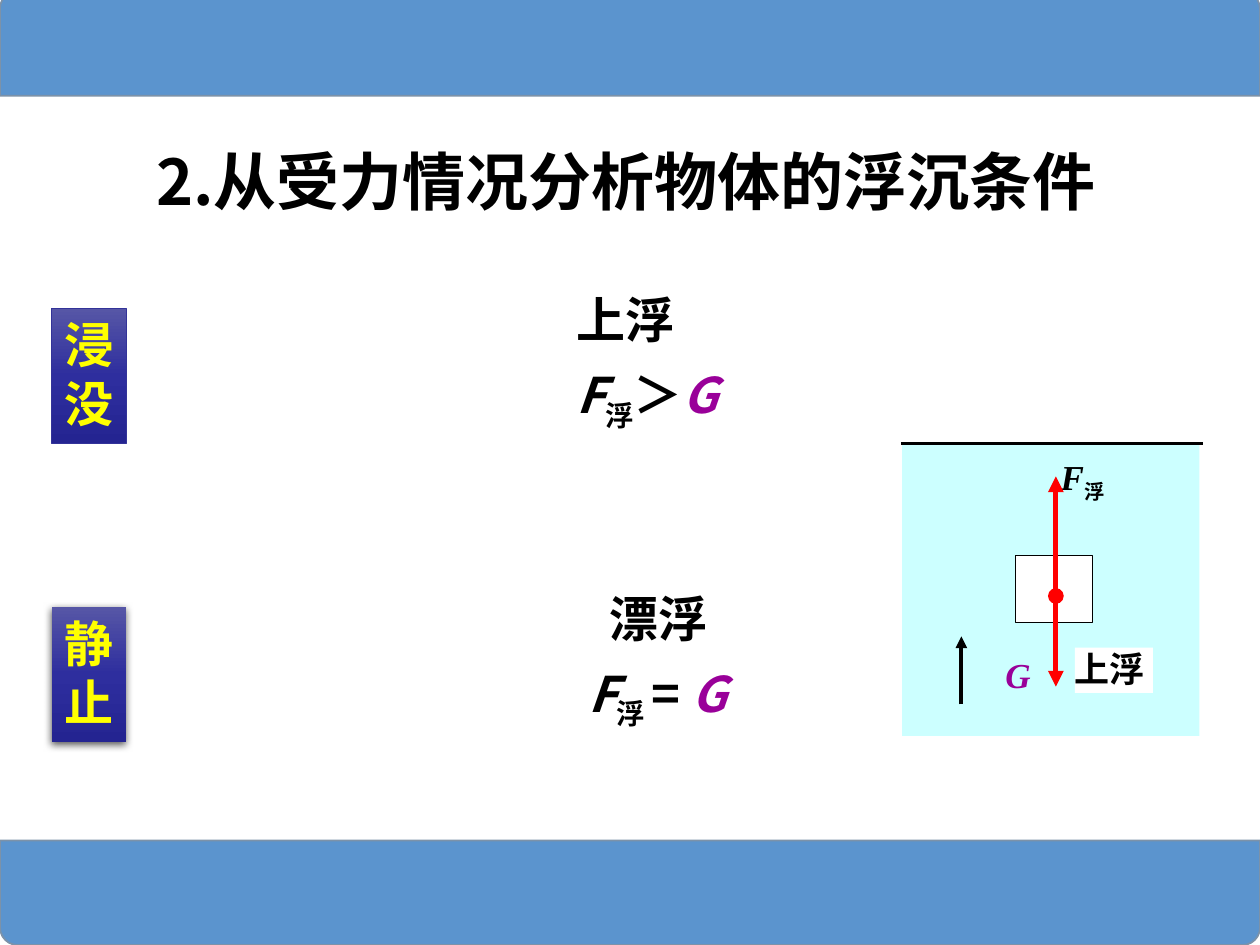
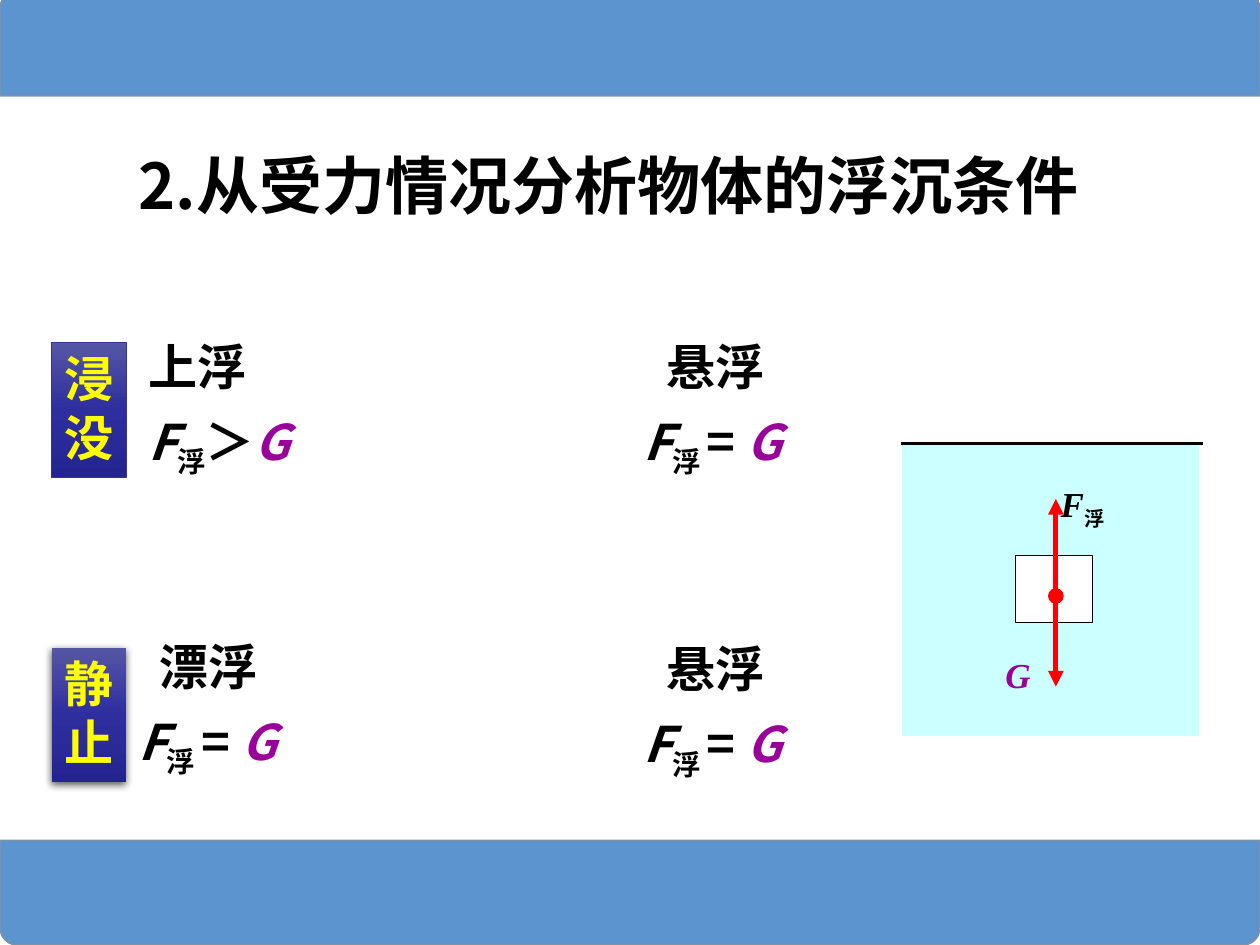
from dataclasses import dataclass

from lxml import etree
from pptx import Presentation
from pptx.dml.color import RGBColor
from pptx.enum.shapes import MSO_CONNECTOR, MSO_SHAPE
from pptx.enum.text import MSO_ANCHOR, MSO_AUTO_SIZE, PP_ALIGN
from pptx.oxml import parse_xml
from pptx.oxml.ns import nsdecls, qn
from pptx.util import Inches, Pt

RECT = MSO_SHAPE.RECTANGLE
BAND = MSO_SHAPE.ROUND_2_SAME_RECTANGLE
STRAIGHT = MSO_CONNECTOR.STRAIGHT
TOP = MSO_ANCHOR.TOP
LEFT = PP_ALIGN.LEFT
NO_FIT = MSO_AUTO_SIZE.NONE
TITLE_ONLY = 5


@dataclass(frozen=True)
class Theme:
    sans: str = "Noto Sans CJK SC"
    serif: str = "Times New Roman"
    ink: str = "000000"
    white: str = "FFFFFF"
    water: str = "CCFFFF"
    force: str = "FF0000"
    gravity: str = "990099"
    band: str = "5B94CE"
    band_line: str = "7C92A9"
    tag_text: str = "FFFF00"
    tag_line: str = "333399"
    tag_stops: tuple = ((0, "5656A6"), (50, "2E2E9E"), (100, "242491"))
    title_size: int = 36
    body_size: int = 28
    label_size: int = 20
    line_height: float = 1.2


T = Theme()
TITLE = "2.从受力情况分析物体的浮沉条件"
GREATER = (("浮", "sub"), ("＞", ""))
EQUAL = (("浮 ", "sub"), ("= ", ""))


def rgb(value):
    return RGBColor.from_string(value)


def box(left, top, width, height):
    return tuple(Inches(v) for v in (left, top, width, height))


def add_run(p, text, size, color=T.ink, font=T.sans, style=""):
    r = p.add_run()
    r.text = text
    f = r.font
    f.size, f.name, f.bold = Pt(size), font, True
    f.italic = style == "italic"
    f.color.rgb = rgb(color)
    props = f._element
    etree.SubElement(props, qn("a:ea")).set("typeface", T.sans)
    if style == "sub":
        props.set("baseline", "-25000")


def set_paragraph(p, size, indent=0, before=0):
    p.alignment = LEFT
    p.line_spacing = Pt(size * T.line_height)
    p.space_before = Pt(before)
    if indent:
        p._p.get_or_add_pPr().set("marL", str(Inches(indent)))


def set_frame(tf, wrap=True):
    tf.word_wrap = wrap
    tf.auto_size = NO_FIT
    tf.vertical_anchor = TOP


def add_title(s, left, top):
    sp = s.shapes.title
    sp.left, sp.top, sp.width, sp.height = box(left, top, 7.73, 0.71)
    set_frame(sp.text_frame)
    p = sp.text_frame.paragraphs[0]
    set_paragraph(p, T.title_size)
    add_run(p, TITLE, T.title_size)


def add_shape(s, kind, place, fill, line=None, line_width=0.75):
    sp = s.shapes.add_shape(kind, *box(*place))
    sp.shadow.inherit = False
    sp.fill.solid()
    sp.fill.fore_color.rgb = rgb(fill)
    if line:
        sp.line.color.rgb = rgb(line)
        sp.line.width = Pt(line_width)
    else:
        sp.line.fill.background()
    return sp


def add_bands(s):
    for top, turn in ((-0.07, 0), (6.67, 180)):
        sp = add_shape(s, BAND, (0, top, 10, 0.83), T.band, T.band_line, 1)
        sp.rotation = turn


def add_line(s, start, end, color, width, head=None, tail=None):
    c = s.shapes.add_connector(STRAIGHT, *(Inches(v) for v in start + end))
    c.line.color.rgb = rgb(color)
    c.line.width = Pt(width)
    for name, kind in (("a:headEnd", head), ("a:tailEnd", tail)):
        if kind:
            etree.SubElement(c.line._ln, qn(name)).set("type", kind)
    etree.SubElement(c._element.spPr, qn("a:effectLst"))


def add_text_box(s, place):
    tf = s.shapes.add_textbox(*box(*place)).text_frame
    set_frame(tf)
    return tf


def add_state(s, left, top, name, relation, name_indent, formula_indent=0):
    tf = add_text_box(s, (left, top, 3.2, 1.3))
    p = tf.paragraphs[0]
    set_paragraph(p, T.body_size, name_indent)
    add_run(p, name, T.body_size)
    p = tf.add_paragraph()
    set_paragraph(p, T.body_size, formula_indent, T.body_size / 2)
    add_run(p, "F", T.body_size, style="italic")
    for text, style in relation:
        add_run(p, text, T.body_size, style=style)
    add_run(p, "G", T.body_size, T.gravity, style="italic")


def add_tag(s, top, letters, raised=False):
    sp = add_shape(s, RECT, (0.41, top, 0.59, 1.07), T.tag_stops[0][1],
                   None if raised else T.tag_line, 0.5)
    stops = "".join(f'<a:gs pos="{pos * 1000}"><a:srgbClr val="{color}"/></a:gs>'
                    for pos, color in T.tag_stops)
    props = sp._element.spPr
    solid = props.find(qn("a:solidFill"))
    props.replace(solid, parse_xml(
        f'<a:gradFill {nsdecls("a")}><a:gsLst>{stops}</a:gsLst>'
        '<a:lin ang="5400000" scaled="0"/></a:gradFill>'))
    if raised:
        props.find(qn("a:effectLst")).append(parse_xml(
            f'<a:outerShdw {nsdecls("a")} blurRad="{Pt(4.5)}" dist="{Pt(1.5)}" '
            'dir="5400000" rotWithShape="0"><a:srgbClr val="000000">'
            '<a:alpha val="63000"/></a:srgbClr></a:outerShdw>'))
    tf = sp.text_frame
    set_frame(tf, wrap=False)
    for i, letter in enumerate(letters):
        p = tf.add_paragraph() if i else tf.paragraphs[0]
        set_paragraph(p, T.body_size)
        add_run(p, letter, T.body_size, T.tag_text)


def add_water(s):
    add_shape(s, RECT, (7.16, 3.52, 2.36, 2.32), T.water)
    add_line(s, (7.15, 3.52), (9.55, 3.52), T.ink, 1.5)


def add_rising_mark(s):
    sp = add_shape(s, RECT, (8.53, 5.14, 0.62, 0.36), T.white)
    tf = sp.text_frame
    set_frame(tf)
    tf.margin_left = tf.margin_top = tf.margin_right = tf.margin_bottom = 0
    p = tf.paragraphs[0]
    set_paragraph(p, T.label_size)
    add_run(p, "上浮", T.label_size)
    add_line(s, (7.63, 5.59), (7.63, 5.05), T.ink, 2.25, tail="triangle")


def add_block_forces(s, buoyancy_tip, label_top):
    center = (8.38, 4.73)
    add_shape(s, RECT, (8.06, 4.41, 0.61, 0.53), T.white, T.ink)
    p = add_text_box(s, (8.32, label_top, 0.71, 0.43)).paragraphs[0]
    set_paragraph(p, T.label_size)
    add_run(p, "F", T.label_size, font=T.serif, style="italic")
    add_run(p, "浮", T.label_size, style="sub")
    add_line(s, center, (8.38, buoyancy_tip), T.force, 3, tail="triangle")
    p = add_text_box(s, (7.88, 5.14, 0.58, 0.43)).paragraphs[0]
    set_paragraph(p, T.label_size)
    add_run(p, "G", T.label_size, T.gravity, T.serif, "italic")
    add_line(s, center, (8.38, 5.45), T.force, 3, "oval", "triangle")


def add_base(prs, title_left, title_top):
    s = prs.slides.add_slide(prs.slide_layouts[TITLE_ONLY])
    add_title(s, title_left, title_top)
    add_bands(s)
    add_water(s)
    return s


def add_rising_slide(prs):
    s = add_base(prs, 1.14, 1.08)
    add_rising_mark(s)
    add_block_forces(s, 3.78, 3.61)
    add_state(s, 4.4, 2.25, "上浮", GREATER, 0.08, 0.08)
    add_state(s, 4.57, 4.62, "漂浮", EQUAL, 0.17)
    add_tag(s, 2.45, "浸没")
    add_tag(s, 4.82, "静止", raised=True)


def add_suspended_slide(prs):
    s = add_base(prs, 1, 1.11)
    add_block_forces(s, 3.96, 3.83)
    add_state(s, 1, 2.62, "上浮", GREATER, 0.08, 0.08)
    add_state(s, 1, 5, "漂浮", EQUAL, 0.17)
    for top in (2.62, 5.02):
        add_state(s, 5.01, top, "悬浮", EQUAL, 0.18)
    add_tag(s, 2.72, "浸没")
    add_tag(s, 5.14, "静止", raised=True)


def main():
    prs = Presentation()
    prs.slide_width, prs.slide_height = Inches(10), Inches(7.5)
    add_rising_slide(prs)
    add_suspended_slide(prs)
    prs.save("out.pptx")


if __name__ == "__main__":
    main()
